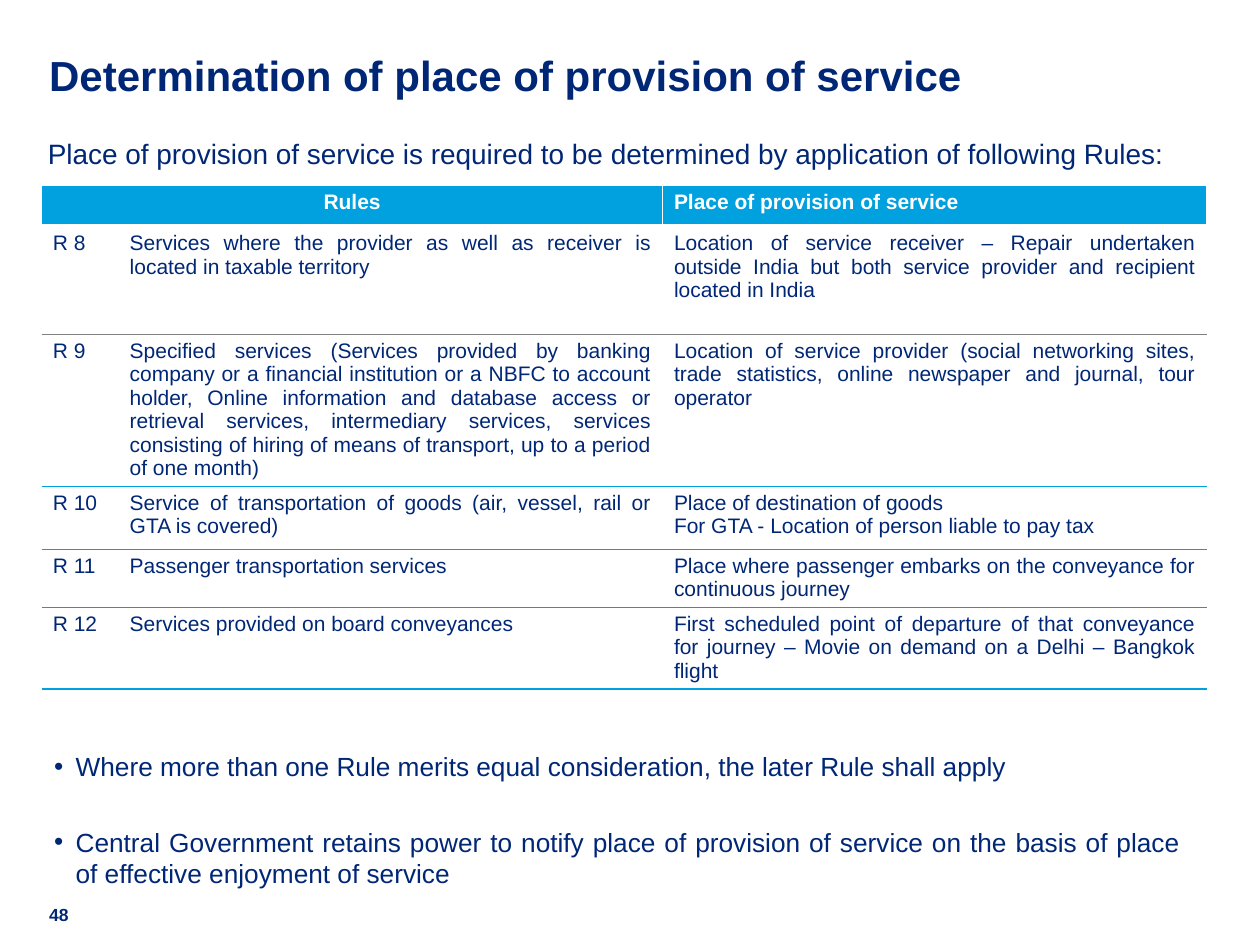
from pptx import Presentation
from pptx.dml.color import RGBColor as RGB
from pptx.enum.text import MSO_ANCHOR as ANCHOR, MSO_AUTO_SIZE as FIT, PP_ALIGN as AL
from pptx.oxml.ns import qn
from pptx.util import Inches, Pt
from lxml.etree import SubElement

C = {"navy": "002776", "cyan": "00A1DE", "white": "FFFFFF", "gray": "808080"}
W, H = 10, 7.5

HEAD = ("Rules", "Place of provision of service")
RULES = [
    ("R 8", "Services where the provider as well as receiver is located in taxable territory",
     "Location of service receiver – Repair undertaken outside India but both service "
     "provider and recipient located in India"),
    ("R 9", "Specified services (Services provided by banking company or a financial "
     "institution or a NBFC to account holder, Online information and database access or "
     "retrieval services, intermediary services, services consisting of hiring of means of "
     "transport, up to a period of one month)",
     "Location of service provider (social networking sites, trade statistics, online "
     "newspaper and journal, tour operator"),
    ("R 10", "Service of transportation of goods (air, vessel, rail or GTA is covered)",
     "Place of destination of goods\nFor GTA - Location of person liable to pay tax"),
    ("R 11", "Passenger transportation services",
     "Place where passenger embarks on the conveyance for continuous journey"),
    ("R 12", "Services provided on board conveyances",
     "First scheduled point of departure of that conveyance for journey – Movie on demand "
     "on a Delhi – Bangkok flight"),
]
COLS = (0.61, 4.32, 4.32)
ROWS = (0.33, 0.85, 1.21, 0.5, 0.46, 0.65)

INTRO = "Place of provision of service is required to be determined by application of following Rules:"
# Bullet text and the space above it in points; the first one clears the table
BULLETS = [
    ("Where more than one Rule merits equal consideration, the later Rule shall apply", 329),
    ("Central Government retains power to notify place of provision of service on the "
     "basis of place of effective enjoyment of service", 22),
]


def place(sp, box):
    sp.left, sp.top, sp.width, sp.height = map(Inches, box)


def setup_frame(tf, anchor=ANCHOR.TOP):
    fmt = dict(margin_left=0, margin_top=0, margin_right=0, margin_bottom=0,
               word_wrap=True, auto_size=FIT.NONE, vertical_anchor=anchor)
    for name, value in fmt.items():
        setattr(tf, name, value)


def write(p, text, size, color="navy", bold=False, **para):
    for name, value in para.items():
        setattr(p, name, value)
    r = p.add_run()
    r.text = text
    for name, value in dict(name="Arial", size=Pt(size), bold=bold).items():
        setattr(r.font, name, value)
    r.font.color.rgb = RGB.from_string(C[color])


def set_bullet(p, char=None, left=0, hang=0):
    pPr = p._p.get_or_add_pPr()
    pPr.set("marL", str(Inches(left)))
    pPr.set("indent", str(Inches(-hang)))
    if char:
        SubElement(pPr, qn("a:buChar"), char=char)
    else:
        SubElement(pPr, qn("a:buNone"))


def set_borders(cell, **sides):
    tcPr = cell._tc.get_or_add_tcPr()
    for side in "LRTB":
        color, width = sides.get(side, (None, 0))
        ln = SubElement(tcPr, qn(f"a:ln{side}"), w=str(Pt(width)))
        if color:
            fill = SubElement(ln, qn("a:solidFill"))
            SubElement(fill, qn("a:srgbClr"), val=C[color])
        else:
            SubElement(ln, qn("a:noFill"))


def add_title(s, box):
    sp = s.shapes.title
    place(sp, box)
    setup_frame(sp.text_frame)
    write(sp.text_frame.paragraphs[0], "Determination of place of provision of service",
          24, bold=True, alignment=AL.LEFT)


def add_body(s, box):
    sp = s.placeholders[1]
    place(sp, box)
    tf = sp.text_frame
    setup_frame(tf)
    p = tf.paragraphs[0]
    set_bullet(p)
    write(p, INTRO, 16, level=2, space_before=Pt(0), space_after=Pt(3))
    for text, gap in BULLETS:
        p = tf.add_paragraph()
        set_bullet(p, "•", 0.22, 0.17)
        write(p, text, 15, level=2, alignment=AL.JUSTIFY,
              space_before=Pt(gap), space_after=Pt(3))


def fill_cell(cell, text, **fmt):
    margins = dict(margin_left=0.09, margin_right=0.09, margin_top=0.04, margin_bottom=0.04)
    for name, value in margins.items():
        setattr(cell, name, Inches(value))
    for i, line in enumerate(text.split("\n")):
        p = cell.text_frame.add_paragraph() if i else cell.text_frame.paragraphs[0]
        write(p, line, 12, **fmt)


def add_rules_table(s, left, top):
    frame = s.shapes.add_table(len(ROWS), len(COLS), *map(
        Inches, (left, top, sum(COLS), sum(ROWS))))
    table = frame.table
    table.first_row = table.horz_banding = False
    for col, width in zip(table.columns, COLS):
        col.width = Inches(width)
    for row, height in zip(table.rows, ROWS):
        row.height = Inches(height)

    # Header row, its first cell spanning the rule number and description
    table.cell(0, 0).merge(table.cell(0, 1))
    thin = ("white", 1)
    for i in range(len(COLS)):
        cell = table.cell(0, i)
        set_borders(cell, L=thin, R=thin, T=thin, B=("white", 3))
        cell.fill.solid()
        cell.fill.fore_color.rgb = RGB.from_string(C["cyan"])
    for i, text, align in zip((0, 2), HEAD, (AL.CENTER, AL.LEFT)):
        fill_cell(table.cell(0, i), text, color="white", bold=True, alignment=align)

    # One row per rule, ruled off below
    above = ("white", 3)
    for n, rule in enumerate(RULES, 1):
        below = ("gray", 0.5) if n == 1 else ("cyan", 1)
        for i, text in enumerate(rule):
            cell = table.cell(n, i)
            set_borders(cell, T=above, B=below)
            cell.fill.background()
            fill_cell(cell, text, alignment=AL.JUSTIFY if i else AL.LEFT)
        above = below


def add_page_number(s, box):
    tf = s.shapes.add_textbox(*map(Inches, box)).text_frame
    setup_frame(tf, ANCHOR.MIDDLE)
    write(tf.paragraphs[0], "48", 10, bold=True)


def main():
    prs = Presentation()
    prs.slide_width, prs.slide_height = Inches(W), Inches(H)
    s = prs.slides.add_slide(prs.slide_layouts[1])
    margin = 0.39
    add_title(s, (margin, margin, W - 2 * margin, 0.69))
    add_page_number(s, (margin, 7.19, margin, 0.13))
    add_body(s, (0.38, 1.08, 8.99, 6.3))
    add_rules_table(s, 0.33, 1.47)
    prs.save("out.pptx")


if __name__ == "__main__":
    main()
